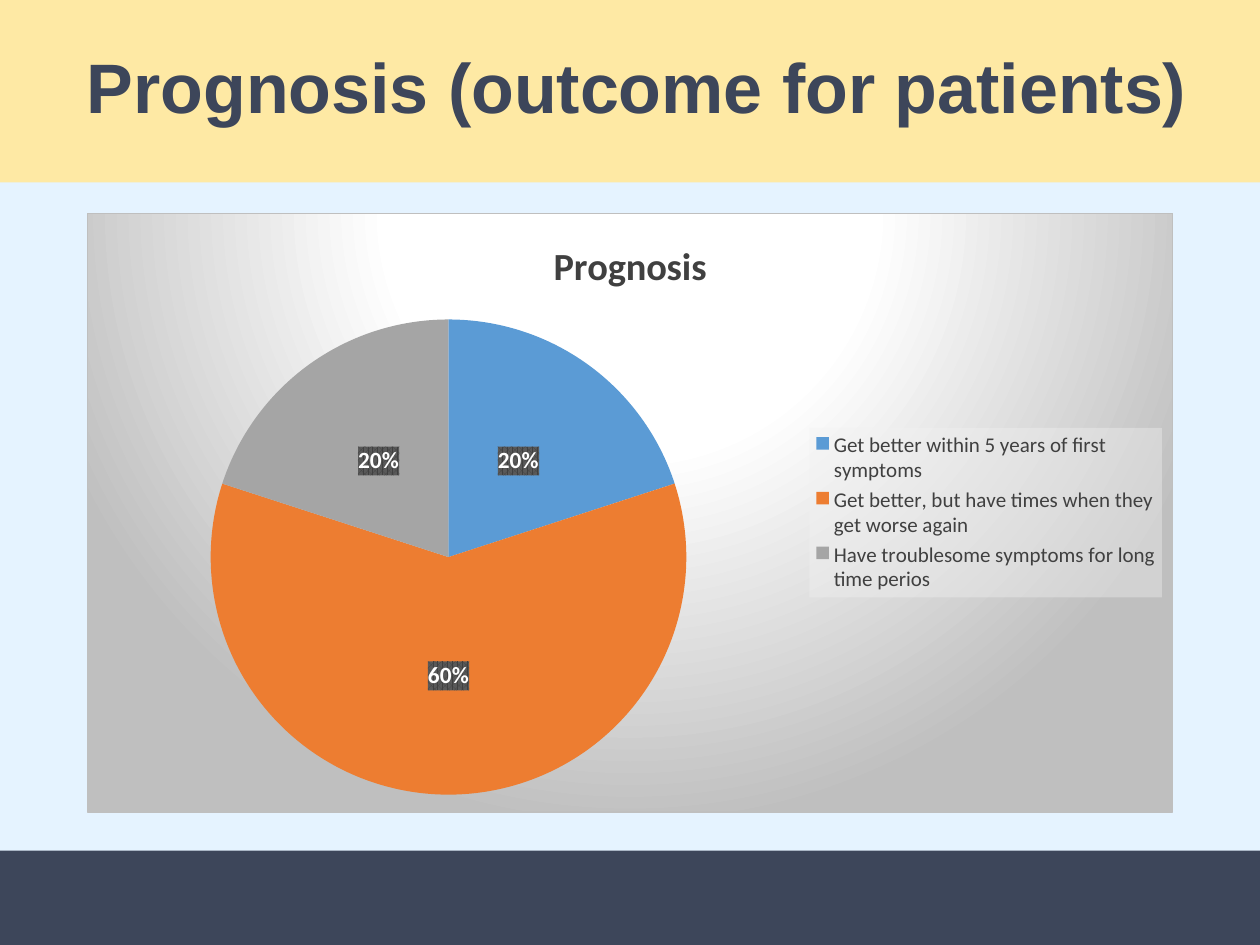
from lxml import etree
from pptx import Presentation, util as u
from pptx.chart.data import CategoryChartData
from pptx.dml.color import RGBColor
from pptx.enum import chart as ch, shapes, text
from pptx.oxml import parse_xml
from pptx.oxml.ns import nsdecls

NAVY, CREAM, SKY = "3D465A", "FEE9A4", "E5F3FF"
CHARCOAL, SILVER, WHITE = "404040", "BFBFBF", "FFFFFF"
WIDTH, HEIGHT = u.Inches(10), u.Inches(7.5)

OUTCOMES = [
    ("Get better within 5 years of first symptoms", 20, "5B9BD5"),
    ("Get better, but have times when they get worse again", 60, "ED7D31"),
    ("Have troublesome symptoms for long time perios", 20, "A5A5A5"),
]


def rgb(value):
    return RGBColor.from_string(value)


def paint(fill, value):
    fill.solid()
    fill.fore_color.rgb = rgb(value)


def style_font(font, size, color, bold=False, name="Calibri"):
    for key, value in dict(size=u.Pt(size), bold=bold, name=name).items():
        setattr(font, key, value)
    font.color.rgb = rgb(color)


def place(part, box):
    left, top, width, height = box
    values = dict(left=left * WIDTH, top=top * HEIGHT,
                  width=width * WIDTH, height=height * HEIGHT)
    for key, value in values.items():
        setattr(part, key, round(value))


def fill_before_text(parent, content):
    spec_xml = f'<c:spPr {nsdecls("c", "a")}>{content}</c:spPr>'
    parent.find("{*}txPr").addprevious(parse_xml(spec_xml))


def add_heading(slide, box):
    heading = slide.shapes.title
    place(heading, box)
    paint(heading.fill, CREAM)
    frame = heading.text_frame
    frame.text = "Prognosis (outcome for patients)"
    settings = dict(vertical_anchor=text.MSO_ANCHOR.MIDDLE, word_wrap=True,
                    auto_size=text.MSO_AUTO_SIZE.NONE)
    for key, value in settings.items():
        setattr(frame, key, value)
    line = frame.paragraphs[0]
    line.alignment = text.PP_ALIGN.LEFT
    line.line_spacing = 0.9
    properties = line._p.get_or_add_pPr()
    properties.set("marL", str(u.Inches(0.59)))
    properties.set("indent", "0")
    style_font(line.runs[0].font, 40, NAVY, True, "Arial")


def add_footer(slide, box):
    footer = slide.shapes.add_shape(shapes.MSO_SHAPE.RECTANGLE, 0, 0, WIDTH, HEIGHT)
    place(footer, box)
    paint(footer.fill, NAVY)
    footer.line.fill.background()
    footer.shadow.inherit = False


def add_prognosis_chart(slide, box):
    names, shares, colors = zip(*OUTCOMES)
    data = CategoryChartData()
    data.categories = names
    data.add_series("Prognosis", shares)
    frame = slide.shapes.add_chart(ch.XL_CHART_TYPE.PIE, 0, 0, WIDTH, HEIGHT, data)
    place(frame, box)
    chart = frame.chart
    style_font(chart.font, 10, WHITE)
    stops = "".join(
        f'<a:gs pos="{position}000"><a:srgbClr val="{color}"/></a:gs>'
        for position, color in [(0, WHITE), (39, WHITE), (100, SILVER)])
    fill_before_text(chart._chartSpace, f'''
        <a:gradFill><a:gsLst>{stops}</a:gsLst><a:path path="circle">
        <a:fillToRect l="50000" t="-80000" r="50000" b="180000"/></a:path></a:gradFill>
        <a:ln w="9525"><a:solidFill><a:srgbClr val="{SILVER}"/></a:solidFill></a:ln>''')

    chart.has_title = True
    chart.chart_title.include_in_layout = False
    caption = chart.chart_title.text_frame
    caption.text = "Prognosis"
    style_font(caption.paragraphs[0].runs[0].font, 22, CHARCOAL, True)

    chart.has_legend = True
    legend = chart.legend
    legend.position = ch.XL_LEGEND_POSITION.RIGHT
    legend.include_in_layout = False
    style_font(legend.font, 12, CHARCOAL)
    fill_before_text(legend._element, '''<a:solidFill><a:srgbClr val="F2F2F2">
        <a:alpha val="39000"/></a:srgbClr></a:solidFill>''')

    plot = chart.plots[0]
    plot.vary_by_categories = True
    series = plot.series[0]
    for index, color in enumerate(colors):
        paint(series.points[index].format.fill, color)
    labels = series.data_labels
    settings = dict(show_percentage=True, show_value=False, number_format="0%",
                    number_format_is_linked=False,
                    position=ch.XL_LABEL_POSITION.CENTER)
    for key, value in settings.items():
        setattr(labels, key, value)
    style_font(labels.font, 13.3, WHITE, True)
    fill_before_text(labels._element, f'''<a:pattFill prst="pct75">
        <a:fgClr><a:srgbClr val="{CHARCOAL}"/></a:fgClr>
        <a:bgClr><a:srgbClr val="595959"/></a:bgClr></a:pattFill>''')


def main():
    deck = Presentation()
    deck.slide_width, deck.slide_height = WIDTH, HEIGHT
    slide = deck.slides.add_slide(deck.slide_layouts[5])
    paint(slide.background.fill, SKY)
    add_footer(slide, (0, 0.9, 1, 0.1))
    add_heading(slide, (0, 0, 1, 0.193))
    add_prognosis_chart(slide, (0.069, 0.225, 0.862, 0.635))
    deck.save("out.pptx")


if __name__ == "__main__":
    main()
